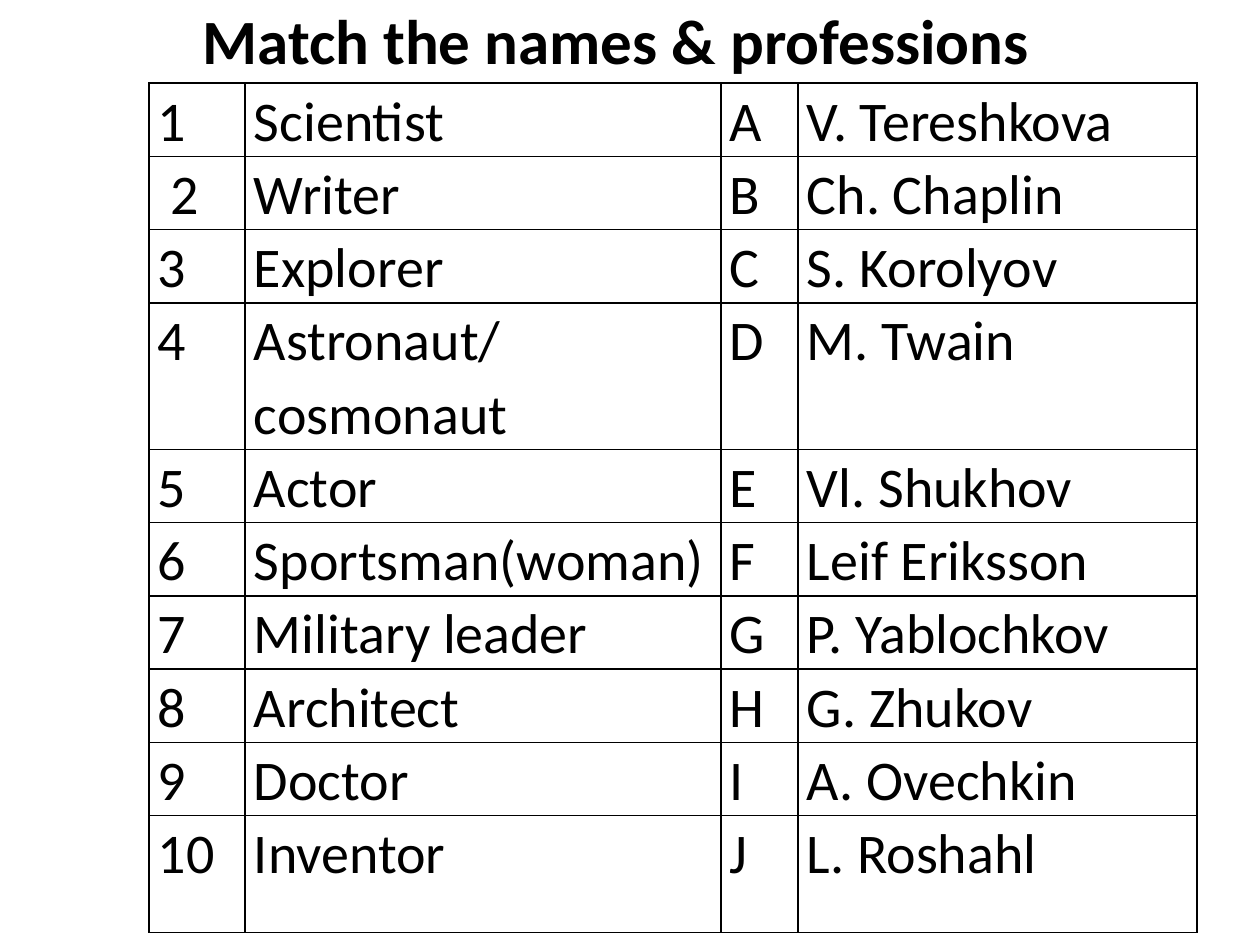
from typing import NamedTuple

from pptx import Presentation
from pptx.dml.color import RGBColor
from pptx.enum.text import MSO_ANCHOR as Anchor, PP_ALIGN as Align
from pptx.oxml import parse_xml
from pptx.oxml.ns import nsdecls
from pptx.util import Emu, Pt

BLACK = RGBColor(0x00, 0x00, 0x00)
FONT = "Calibri"
SCALE = 914400 / 126  # EMU in one px


class Pair(NamedTuple):
    num: str
    job: str
    key: str
    name: str


PAIRS = [
    Pair("1", "Scientist", "A", "V. Tereshkova"),
    Pair(" 2", "Writer", "B", "Ch. Chaplin"),
    Pair("3", "Explorer", "C", "S. Korolyov"),
    Pair("4", "Astronaut/cosmonaut", "D", "M. Twain"),
    Pair("5", "Actor", "E", "Vl. Shukhov"),
    Pair("6", "Sportsman(woman)", "F", "Leif Eriksson"),
    Pair("7", "Military leader", "G", "P. Yablochkov"),
    Pair("8", "Architect", "H", "G. Zhukov"),
    Pair("9", "Doctor", "I", "A. Ovechkin"),
    Pair("10", "Inventor", "J", "L. Roshahl"),
]
COLS = [96, 476, 77, 399]
ROW, LAST = 59, 117


def px(n: int) -> Emu:
    return Emu(round(n * SCALE))


def write(frame, text: str, *, size: int, bold: bool = False,
          align=Align.LEFT, gap: float = 1.0) -> None:
    frame.word_wrap = True
    para = frame.paragraphs[0]
    para.alignment = align
    para.line_spacing = gap
    run = para.add_run()
    run.text = text
    font = run.font
    font.name, font.size, font.bold = FONT, Pt(size), bold
    font.color.rgb = BLACK


def frame_cell(cell) -> None:
    props = cell._tc.get_or_add_tcPr()
    for side in ("lnL", "lnR", "lnT", "lnB"):
        props.append(parse_xml(
            f'<a:{side} {nsdecls("a")} w="{Pt(1)}"><a:solidFill>'
            f'<a:srgbClr val="{BLACK}"/></a:solidFill></a:{side}>'))
    cell.fill.background()
    cell.margin_left = cell.margin_right = px(9)
    cell.margin_top = cell.margin_bottom = 0


def add_pairs(slide, pairs: list[Pair]) -> None:
    high = [ROW] * (len(pairs) - 1) + [LAST]
    table = slide.shapes.add_table(
        len(pairs), len(COLS), px(149), px(83),
        px(sum(COLS)), px(sum(high))).table
    table.first_row = table.horz_banding = False
    for col, wide in zip(table.columns, COLS):
        col.width = px(wide)
    for row, tall, pair in zip(table.rows, high, pairs):
        row.height = px(tall)
        for cell, text in zip(row.cells, pair):
            frame_cell(cell)
            write(cell.text_frame, text, size=32, gap=1.07)


def add_title(slide, text: str) -> None:
    box = slide.shapes.add_textbox(px(73), px(-47), px(1086), px(183))
    box.text_frame.vertical_anchor = Anchor.MIDDLE
    write(box.text_frame, text, size=36, bold=True,
          align=Align.CENTER, gap=0.9)


def main() -> None:
    deck = Presentation()
    deck.slide_width, deck.slide_height = px(1260), px(945)
    slide = deck.slides.add_slide(deck.slide_layouts[6])

    # Matching table
    add_pairs(slide, PAIRS)

    # Title
    add_title(slide, "Match the names & professions")

    deck.save("out.pptx")


if __name__ == "__main__":
    main()
